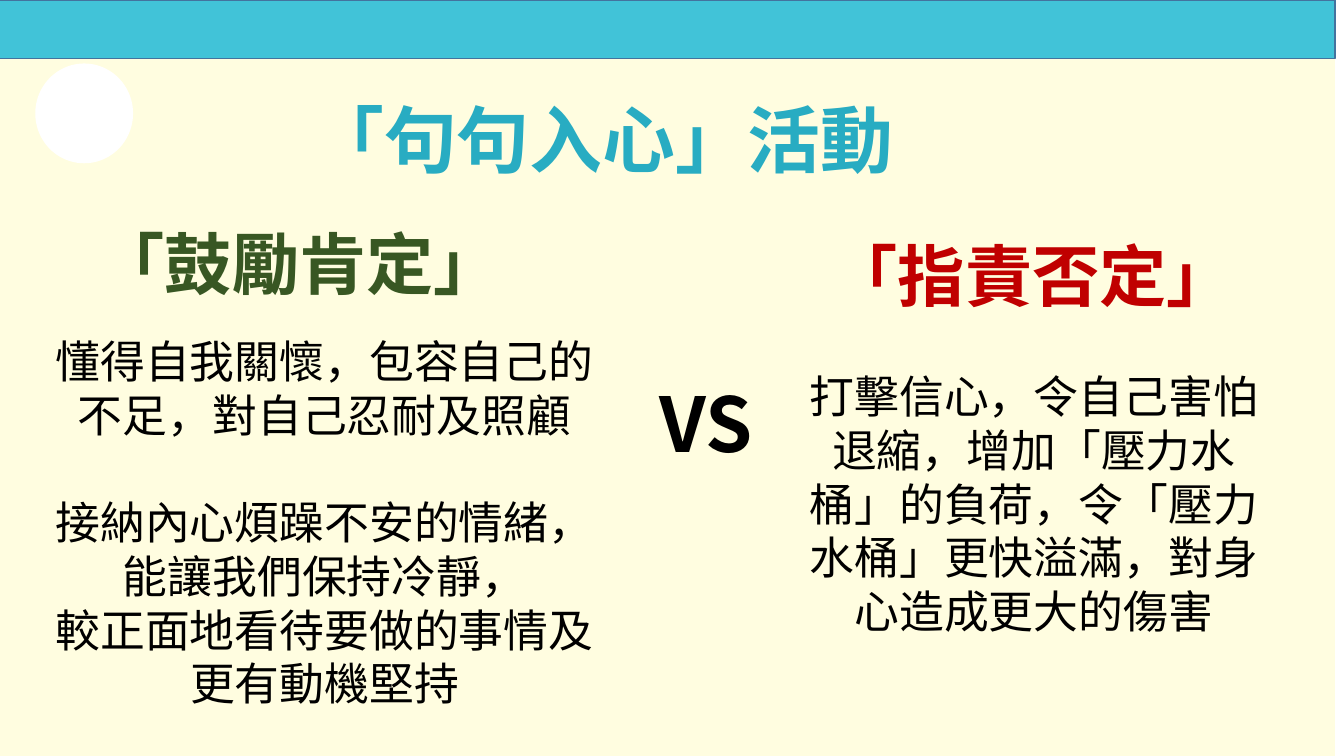
from lxml import etree
from pptx import Presentation
from pptx.dml.color import RGBColor
from pptx.enum.shapes import MSO_SHAPE
from pptx.enum.text import MSO_ANCHOR, MSO_AUTO_SIZE, PP_ALIGN
from pptx.oxml.ns import qn
from pptx.util import Inches, Pt

RECTANGLE = MSO_SHAPE.RECTANGLE
OVAL = MSO_SHAPE.OVAL
TOP = MSO_ANCHOR.TOP
BOTTOM = MSO_ANCHOR.BOTTOM
LEFT = PP_ALIGN.LEFT
CENTER = PP_ALIGN.CENTER
FIT_SHAPE = MSO_AUTO_SIZE.SHAPE_TO_FIT_TEXT
NO_FIT = MSO_AUTO_SIZE.NONE
FONT = "Noto Sans CJK SC"


def color(hex_value):
    """Turn a hex string into a colour."""
    return RGBColor.from_string(hex_value)


def add_panel(slide, kind, left, top, width, height, fill, line=None):
    """Add a filled shape with an optional thin outline."""
    shape = slide.shapes.add_shape(
        kind, Inches(left), Inches(top), Inches(width), Inches(height))
    shape.shadow.inherit = False
    shape.fill.solid()
    shape.fill.fore_color.rgb = color(fill)
    if line:
        shape.line.color.rgb = color(line)
        shape.line.width = Pt(1)
    else:
        shape.line.fill.background()


def format_run(run, size, hex_value, bold):
    """Set the Latin and East Asian font of a run."""
    run.font.size = Pt(size)
    run.font.bold = bold
    run.font.color.rgb = color(hex_value)
    run.font.name = FONT
    east_asian = etree.SubElement(run.font._element, qn("a:ea"))
    east_asian.set("typeface", FONT)


def add_text(slide, text, left, top, width, height, size=32, hex_value="000000",
             bold=False, align=CENTER, anchor=TOP, wrap=True, fit=FIT_SHAPE,
             spacing=1.2, gap_before=()):
    """Add a text box, with a blank line's gap before the numbered paragraphs."""
    box = slide.shapes.add_textbox(
        Inches(left), Inches(top), Inches(width), Inches(height))
    frame = box.text_frame
    frame.word_wrap = wrap
    frame.auto_size = fit
    frame.vertical_anchor = anchor
    frame.text = text
    for index, paragraph in enumerate(frame.paragraphs):
        paragraph.alignment = align
        paragraph.line_spacing = Pt(size * spacing)
        if index in gap_before:
            paragraph.space_before = Pt(size * spacing)
        for run in paragraph.runs:
            format_run(run, size, hex_value, bold)


def add_heading(slide, text, left, top, hex_value):
    """Add the bold heading of one side."""
    add_text(slide, text, left, top, 4.24, 0.91, size=48, hex_value=hex_value,
             bold=True, align=LEFT, wrap=False)


def main():
    """Build the comparison slide."""
    presentation = Presentation()
    presentation.slide_width = Inches(13.33)
    presentation.slide_height = Inches(7.5)
    slide = presentation.slides.add_slide(presentation.slide_layouts[6])

    add_panel(slide, RECTANGLE, -0.09, 0, 13.33, 7.5, "FFFDE0")
    add_panel(slide, RECTANGLE, -0.09, 0, 13.33, 0.58, "41C3D8", line="43739E")
    add_text(slide, "「句句入心」活動", 2.99, 0.41, 10.38, 1.45, size=52,
             hex_value="28ACC2", bold=True, align=LEFT, anchor=BOTTOM, fit=NO_FIT,
             spacing=1.1)
    add_panel(slide, OVAL, 0.35, 0.63, 0.97, 0.99, "FFFFFF")

    add_text(slide, "懂得自我關懷，包容自己的不足，對自己忍耐及照顧\n"
             "接納內心煩躁不安的情緒，能讓我們保持冷靜，\n"
             "較正面地看待要做的事情及更有動機堅持",
             0.35, 3.26, 5.74, 3.87, gap_before=(1,))
    add_text(slide, "打擊信心，令自己害怕退縮，增加「壓力水桶」的負荷，"
             "令「壓力水桶」更快溢滿，對身心造成更大的傷害",
             7.75, 3.61, 5.01, 2.79)
    add_text(slide, "VS", 2.01, 3.69, 9.99, 1.01, size=54, bold=True)
    add_heading(slide, "「鼓勵肯定」", 0.87, 2.16, "385723")
    add_heading(slide, "「指責否定」", 8.14, 2.28, "C00000")
    presentation.save("out.pptx")


if __name__ == "__main__":
    main()
